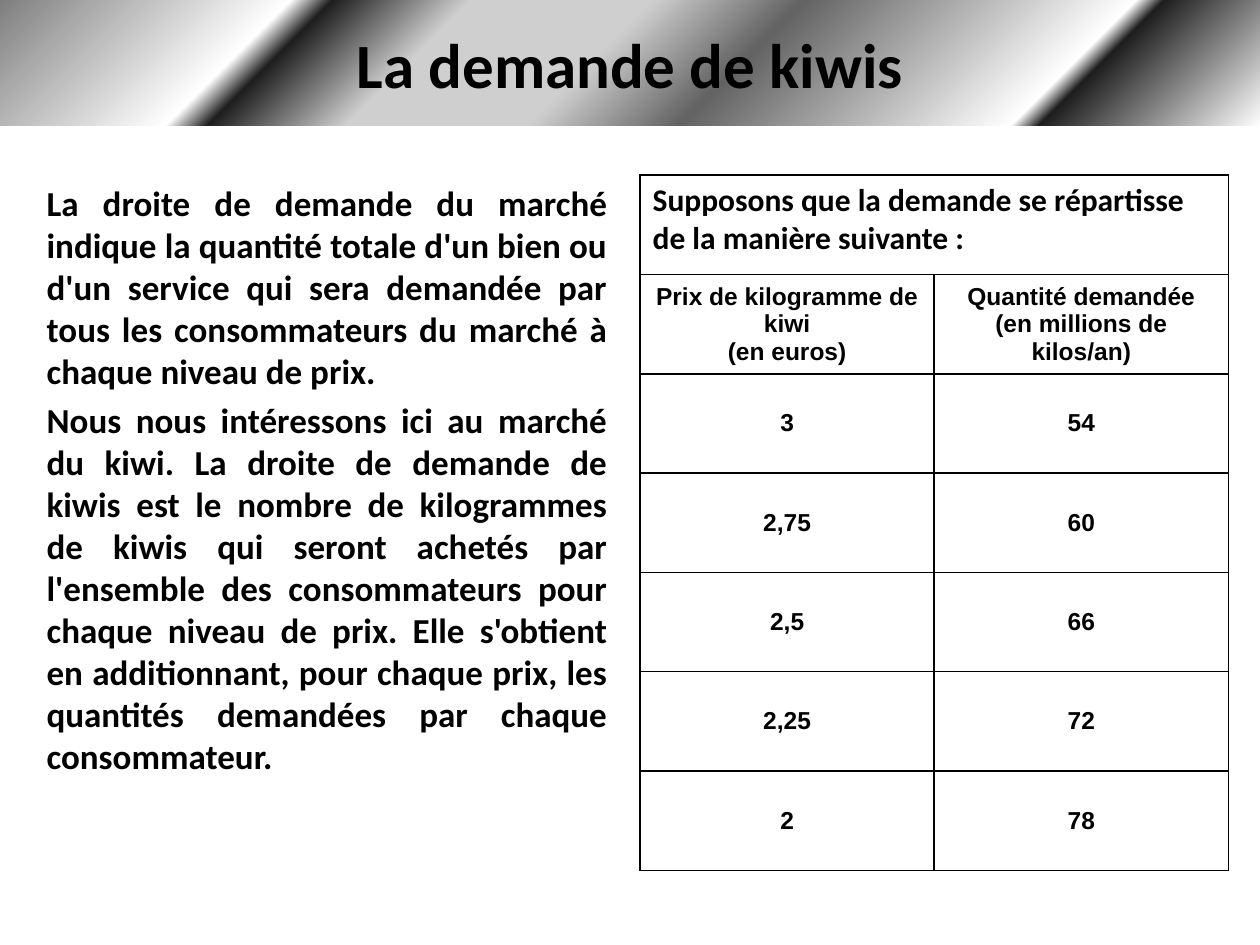
from lxml.etree import SubElement
from pptx import Presentation
from pptx.dml.color import RGBColor
from pptx.enum.text import MSO_ANCHOR, MSO_AUTO_SIZE, PP_ALIGN
from pptx.oxml import parse_xml
from pptx.oxml.ns import nsdecls, qn
from pptx.util import Inches, Pt

# Content
TITLE = "La demande de kiwis"
BODY = [
    "La droite de demande du marché indique la quantité totale d'un bien ou d'un service "
    "qui sera demandée par tous les consommateurs du marché à chaque niveau de prix.",
    "Nous nous intéressons ici au marché du kiwi. La droite de demande de kiwis est le nombre "
    "de kilogrammes de kiwis qui seront achetés par l'ensemble des consommateurs pour chaque "
    "niveau de prix. Elle s'obtient en additionnant, pour chaque prix, les quantités demandées "
    "par chaque consommateur.",
]
CAPTION = "Supposons que la demande se répartisse de la manière suivante :"
HEADERS = (["Prix de kilogramme de kiwi", "(en euros)"],
           ["Quantité demandée", "(en millions de kilos/an)"])
DEMAND = [("3", "54"), ("2,75", "60"), ("2,5", "66"), ("2,25", "72"), ("2", "78")]

# Style
COLORS = {"text": "000000", "border": "000000"}
BANNER_STOPS = [(0, "FFFFFF"), (16, "1F1F1F"), (18, "FFFFFF"), (42, "636363"), (53, "CFCFCF"),
                (66, "CFCFCF"), (76, "1F1F1F"), (79, "FFFFFF"), (100, "7F7F7F")]
BANNER_ANGLE = 225
FORMATS = {
    "title": ({"name": "Calibri", "size": Pt(36), "bold": True}, PP_ALIGN.CENTER),
    "body": ({"name": "Calibri", "size": Pt(20), "bold": True}, PP_ALIGN.JUSTIFY),
    "caption": ({"name": "Calibri", "size": Pt(18), "bold": True}, PP_ALIGN.LEFT),
    "cell": ({"name": "Arial", "size": Pt(14), "bold": True}, PP_ALIGN.CENTER),
}
BOXES = {"title": (0, 0, 10, 1), "body": (0.27, 1.39, 4.65, 5.51), "table": (5.08, 1.39, 4.67, 5.52)}


def box(name):
    return [Inches(v) for v in BOXES[name]]


def write(tf, lines, style):
    font, align = FORMATS[style]
    for i, line in enumerate(lines):
        p = tf.paragraphs[0] if i == 0 else tf.add_paragraph()
        p.alignment = align
        r = p.add_run()
        r.text = line
        r.font.color.rgb = RGBColor.from_string(COLORS["text"])
        for key, value in font.items():
            setattr(r.font, key, value)


def fill_placeholder(sp, name, lines, anchor):
    sp.left, sp.top, sp.width, sp.height = box(name)
    tf = sp.text_frame
    tf.word_wrap = True
    tf.auto_size = MSO_AUTO_SIZE.NONE
    tf.vertical_anchor = anchor
    write(tf, lines, name)


def add_gradient(sp):
    stops = "".join(f'<a:gs pos="{pos * 1000}"><a:srgbClr val="{c}"/></a:gs>'
                    for pos, c in BANNER_STOPS)
    sp._element.spPr.append(parse_xml(
        f'<a:gradFill {nsdecls("a")} rotWithShape="1"><a:gsLst>{stops}</a:gsLst>'
        f'<a:lin ang="{BANNER_ANGLE * 60000}" scaled="0"/></a:gradFill>'))


def add_borders(cell):
    tcPr = cell._tc.get_or_add_tcPr()
    for side in ("lnL", "lnR", "lnT", "lnB"):
        ln = SubElement(tcPr, qn(f"a:{side}"), w=str(Pt(1)))
        SubElement(SubElement(ln, qn("a:solidFill")), qn("a:srgbClr"), val=COLORS["border"])


prs = Presentation()
prs.slide_width, prs.slide_height = Inches(10), Inches(7.5)
s = prs.slides.add_slide(prs.slide_layouts[0])

# Banner title and explanation
title, body = s.placeholders
fill_placeholder(title, "title", [TITLE], MSO_ANCHOR.MIDDLE)
add_gradient(title)
fill_placeholder(body, "body", BODY, MSO_ANCHOR.TOP)

# Demand table: a caption across both columns, headers, then values
rows = [HEADERS] + [[[value] for value in pair] for pair in DEMAND]
table = s.shapes.add_table(len(rows) + 1, len(HEADERS), *box("table")).table
table.first_row = table.horz_banding = False
for cell in table.iter_cells():
    add_borders(cell)
    cell.fill.background()
table.cell(0, 0).merge(table.cell(0, 1))
write(table.cell(0, 0).text_frame, [CAPTION], "caption")

CELL_FORMAT = {"vertical_anchor": MSO_ANCHOR.MIDDLE, "margin_left": Inches(0.07),
               "margin_right": Inches(0.07), "margin_top": 0, "margin_bottom": 0}
for i, row in enumerate(rows, 1):
    for j, lines in enumerate(row):
        cell = table.cell(i, j)
        for key, value in CELL_FORMAT.items():
            setattr(cell, key, value)
        write(cell.text_frame, lines, "cell")

prs.save("out.pptx")
